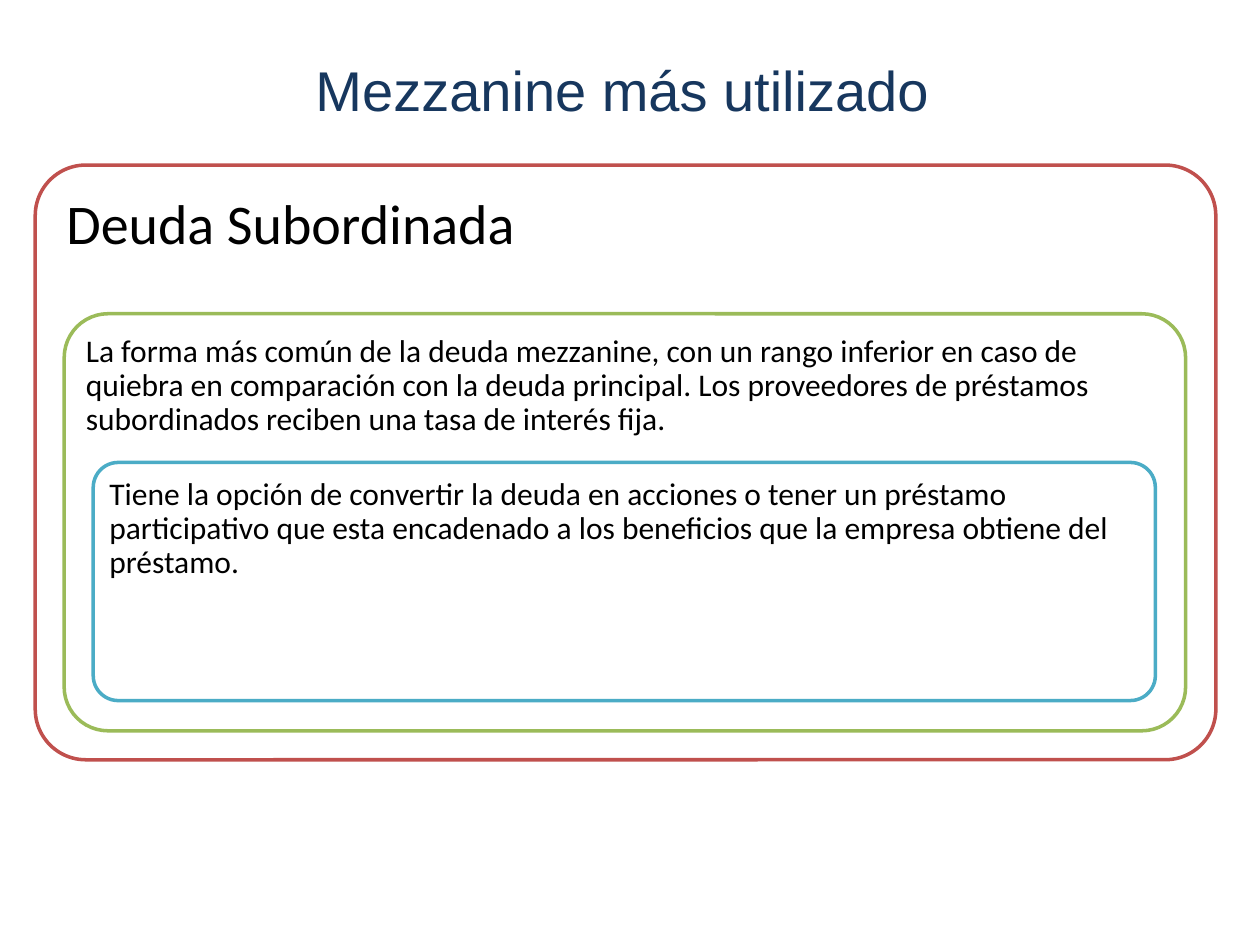
from pptx import Presentation
from pptx.dml.color import RGBColor
from pptx.enum.shapes import MSO_SHAPE as Shape
from pptx.enum.text import MSO_ANCHOR as Anchor, PP_ALIGN as Align
from pptx.util import Inches, Pt

TITLE = "Mezzanine más utilizado"
# Nested panels, outermost first:
# text, size, outline, (left, top, width, height), corner, inset
PANELS = [
    ("Deuda Subordinada",
     32, "C0504D", (0.28, 1.31, 9.37, 4.72), 0.085, 0.13),
    ("La forma más común de la deuda mezzanine, con un rango inferior en caso de "
     "quiebra en comparación con la deuda principal. Los proveedores de préstamos "
     "subordinados reciben una tasa de interés fija.",
     18, "9BBB59", (0.51, 2.49, 8.9, 3.31), 0.105, 0.07),
    ("Tiene la opción de convertir la deuda en acciones o tener un préstamo "
     "participativo que esta encadenado a los beneficios que la empresa obtiene "
     "del préstamo.",
     18, "4BACC6", (0.74, 3.67, 8.43, 1.89), 0.105, 0.07),
]


def color(value):
    return RGBColor.from_string(value)


def write(box, text, size, font, ink, align, anchor):
    frame = box.text_frame
    frame.word_wrap = True
    frame.vertical_anchor = anchor
    para = frame.paragraphs[0]
    para.text = text
    para.alignment = align
    para.font.size = Pt(size)
    para.font.name = font
    para.font.color.rgb = color(ink)
    return frame, para


def add_panel(page, text, size, outline, place, corner, inset):
    panel = page.shapes.add_shape(Shape.ROUNDED_RECTANGLE, *map(Inches, place))
    panel.adjustments[0] = corner
    panel.shadow.inherit = False
    panel.fill.solid()
    panel.fill.fore_color.rgb = color("FFFFFF")
    panel.line.color.rgb = color(outline)
    panel.line.width = Pt(2)
    frame, para = write(panel, text, size, "Calibri", "000000", Align.LEFT, Anchor.TOP)
    frame.margin_left = frame.margin_right = Inches(inset)
    frame.margin_top = frame.margin_bottom = Inches(inset)
    para.line_spacing = 0.9


deck = Presentation()
deck.slide_width, deck.slide_height = Inches(10), Inches(7.5)
page = deck.slides.add_slide(deck.slide_layouts[6])

# Title
title = page.shapes.add_textbox(*map(Inches, (0.35, 0.21, 9.18, 1)))
write(title, TITLE, 32, "Arial", "17375E", Align.CENTER, Anchor.MIDDLE)

# Nested panels
for panel in PANELS:
    add_panel(page, *panel)

deck.save("out.pptx")
